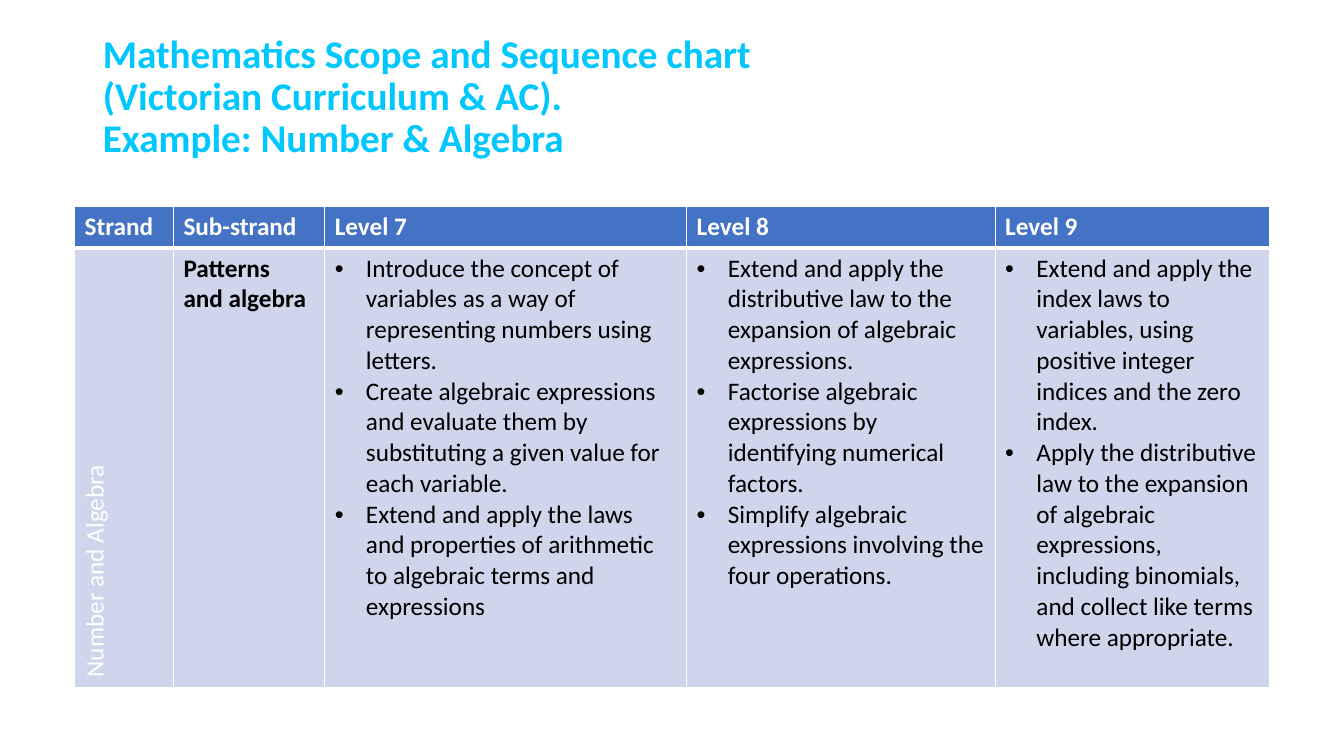
from dataclasses import dataclass

from lxml import etree
from pptx import Presentation
from pptx import util as u
from pptx.dml.color import RGBColor
from pptx.enum import text
from pptx.oxml.ns import qn


@dataclass(frozen=True)
class Theme:
    font: str = "Calibri"
    title: str = "00C8FF"
    header: str = "4472C4"
    body: str = "CFD5EA"
    white: str = "FFFFFF"
    black: str = "000000"
    title_size: int = 28
    table_size: int = 18
    thin: int = 1
    thick: int = 3


theme = Theme()


def style(para, size, colour, bold):
    for span in para.runs:
        span.font.name = theme.font
        span.font.size = u.Pt(size)
        span.font.bold = bold
        span.font.color.rgb = RGBColor.from_string(colour)


def add_border(cell, side, width):
    line = etree.SubElement(cell._tc.get_or_add_tcPr(), qn(f"a:{side}"), w=str(u.Pt(width)))
    fill = etree.SubElement(line, qn("a:solidFill"))
    etree.SubElement(fill, qn("a:srgbClr"), val=theme.white)


headings = ["Strand", "Sub-strand", "Level 7", "Level 8", "Level 9"]
content = [
    ["Number and Algebra"],
    ["Patterns and algebra"],
    [
        "Introduce the concept of variables as a way of representing numbers using letters.",
        "Create algebraic expressions and evaluate them by substituting a given value for each variable.",
        "Extend and apply the laws and properties of arithmetic to algebraic terms and expressions",
    ],
    [
        "Extend and apply the distributive law to the expansion of algebraic expressions.",
        "Factorise algebraic expressions by identifying numerical factors.",
        "Simplify algebraic expressions involving the four operations.",
    ],
    [
        "Extend and apply the index laws to variables, using positive integer indices and the zero index.",
        "Apply the distributive law to the expansion of algebraic expressions, "
        "including binomials, and collect like terms where appropriate.",
    ],
]
widths = [0.98, 1.5, 3.59, 3.06, 2.72]
heights = [0.41, 4.36]

deck = Presentation()
deck.slide_width = u.Inches(13.33)
deck.slide_height = u.Inches(7.5)
page = deck.slides.add_slide(deck.slide_layouts[5])

title = page.shapes.title
title.left, title.top = u.Inches(0.92), u.Inches(0.4)
title.width, title.height = u.Inches(11.5), u.Inches(1.14)
frame = title.text_frame
frame.text = "Mathematics Scope and Sequence chart\v(Victorian Curriculum & AC). \vExample: Number & Algebra"
frame.word_wrap = True
frame.auto_size = text.MSO_AUTO_SIZE.NONE
frame.vertical_anchor = text.MSO_ANCHOR.MIDDLE
heading = frame.paragraphs[0]
heading.alignment = text.PP_ALIGN.LEFT
heading.line_spacing = 0.9
style(heading, theme.title_size, theme.title, True)

table = page.shapes.add_table(
    len(heights), len(widths), u.Inches(0.74), u.Inches(2.05), u.Inches(sum(widths)), u.Inches(sum(heights))
).table
for row, height in zip(table.rows, heights):
    row.height = u.Inches(height)

for index, width in enumerate(widths):
    table.columns[index].width = u.Inches(width)
    header, body = table.cell(0, index), table.cell(1, index)
    header.text_frame.text = headings[index]
    style(header.text_frame.paragraphs[0], theme.table_size, theme.white, True)
    body.text_frame.text = "\n".join(content[index])
    for para in body.text_frame.paragraphs:
        if index >= 2:
            props = para._p.get_or_add_pPr()
            props.set("marL", str(u.Inches(0.31)))
            props.set("indent", str(u.Inches(-0.31)))
            etree.SubElement(props, qn("a:buFont"), typeface="Arial")
            etree.SubElement(props, qn("a:buChar"), char="•")
        style(para, theme.table_size, theme.white if index == 0 else theme.black, index == 1)
    for cell, colour, shared in ((header, theme.header, "lnB"), (body, theme.body, "lnT")):
        for side in ("lnL", "lnR", "lnT", "lnB"):
            add_border(cell, side, theme.thick if side == shared else theme.thin)
        cell.fill.solid()
        cell.fill.fore_color.rgb = RGBColor.from_string(colour)

table.cell(1, 0)._tc.get_or_add_tcPr().set("vert", "vert270")

deck.save("out.pptx")
